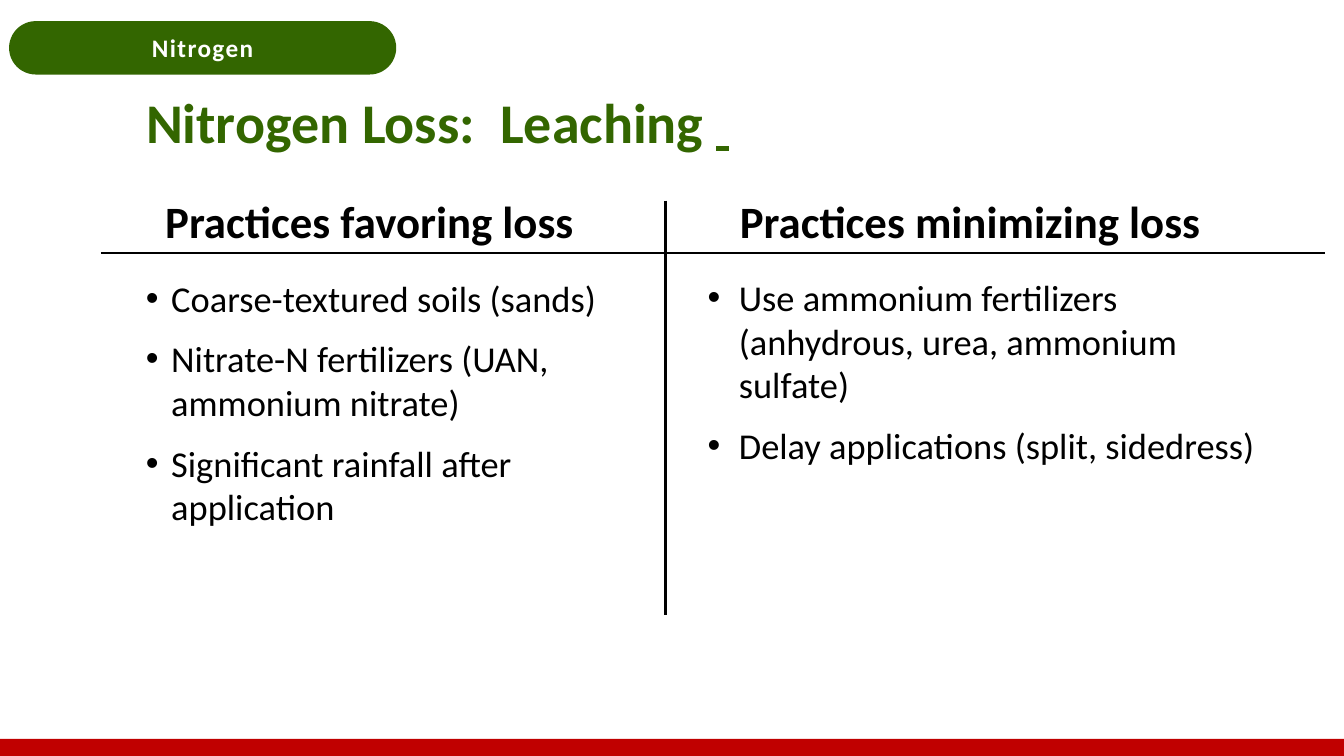
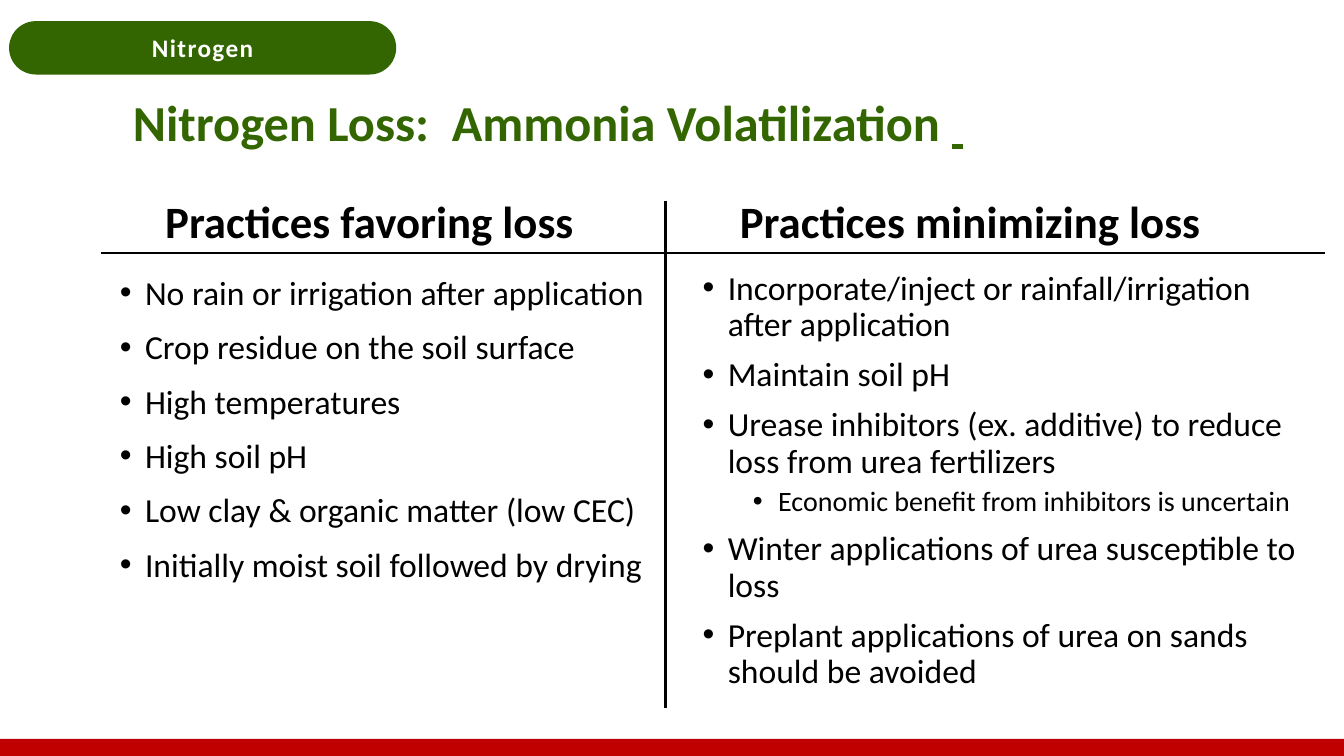
from dataclasses import dataclass

import pptx
import pptx.dml.color
import pptx.enum.shapes
import pptx.enum.text
import pptx.oxml.ns
import pptx.util
from lxml import etree
from pptx.util import Inches

GREEN, RED, BLACK, WHITE = "336600", "C00000", "000000", "FFFFFF"
FONT = "Calibri"
SLIDE_W, SLIDE_H = 13.33, 7.5
RULE_X, RULE_Y = 6.6, 2.51
HEADINGS = (("Practices favoring loss", 1.54), ("Practices minimizing loss", 7.24))


@dataclass
class Bullet:
    text: str
    size: float
    level: int = 0
    before: float = 0


@dataclass
class BulletList:
    box: tuple[float, float, float, float]
    bullets: list[Bullet]
    hang: float = 0.25
    after: float = 0
    line_spacing: float = 1.0


@dataclass
class LossSlide:
    title: str
    title_left: float
    title_size: float
    rule_bottom: float
    lists: tuple[BulletList, BulletList]


def rgb(hex_colour: str) -> pptx.dml.color.RGBColor:
    return pptx.dml.color.RGBColor.from_string(hex_colour)


def add_run(p, text: str, size: float, colour: str = BLACK, bold: bool = False):
    r = p.add_run()
    r.text = text
    r.font.name = FONT
    r.font.size = pptx.util.Pt(size)
    r.font.bold = bold
    r.font.color.rgb = rgb(colour)
    return r


def add_text_box(s, left: float, top: float, width: float, height: float):
    tf = s.shapes.add_textbox(
        Inches(left), Inches(top), Inches(width), Inches(height)).text_frame
    tf.word_wrap = True
    return tf


def add_filled_shape(s, kind, left: float, top: float, width: float, height: float, fill: str):
    sp = s.shapes.add_shape(
        kind, Inches(left), Inches(top), Inches(width), Inches(height))
    sp.shadow.inherit = False
    sp.fill.solid()
    sp.fill.fore_color.rgb = rgb(fill)
    sp.line.fill.background()
    return sp


def add_rule(s, x1: float, y1: float, x2: float, y2: float) -> None:
    line = s.shapes.add_connector(
        pptx.enum.shapes.MSO_CONNECTOR.STRAIGHT,
        Inches(x1), Inches(y1), Inches(x2), Inches(y2))
    line.line.color.rgb = rgb(BLACK)
    line.line.width = pptx.util.Pt(1.5)
    etree.SubElement(line._element.spPr, pptx.oxml.ns.qn("a:effectLst"))


def add_frame(s) -> None:
    """Draw the bottom band and the section pill."""
    shapes = pptx.enum.shapes.MSO_SHAPE
    add_filled_shape(s, shapes.RECTANGLE, 0, 7.33, SLIDE_W, SLIDE_H - 7.33, RED)
    pill = add_filled_shape(s, shapes.ROUNDED_RECTANGLE, 0.09, 0.21, 3.84, 0.53, GREEN)
    pill.adjustments[0] = 0.5
    tf = pill.text_frame
    tf.vertical_anchor = pptx.enum.text.MSO_ANCHOR.MIDDLE
    p = tf.paragraphs[0]
    p.alignment = pptx.enum.text.PP_ALIGN.CENTER
    r = add_run(p, "Nitrogen", 18, WHITE, bold=True)
    r._r.get_or_add_rPr().set("spc", "100")


def add_title(s, text: str, left: float, size: float) -> None:
    tf = add_text_box(s, left, 0.74, 10.89, 1)
    tf.vertical_anchor = pptx.enum.text.MSO_ANCHOR.MIDDLE
    p = tf.paragraphs[0]
    p.line_spacing = 0.9
    add_run(p, text + " ", size, GREEN, bold=True)
    add_run(p, " ", size, GREEN, bold=True).font.underline = True


def set_bullet(p, level: int, hang: float) -> None:
    p.level = level
    pPr = p._p.get_or_add_pPr()
    pPr.set("marL", str(Inches(hang + 0.5 * level)))
    pPr.set("indent", str(-Inches(hang)))
    etree.SubElement(pPr, pptx.oxml.ns.qn("a:buFont")).set("typeface", "Arial")
    etree.SubElement(pPr, pptx.oxml.ns.qn("a:buChar")).set("char", "•")


def add_bullets(s, items: BulletList) -> None:
    tf = add_text_box(s, *items.box)
    for i, bullet in enumerate(items.bullets):
        p = tf.add_paragraph() if i else tf.paragraphs[0]
        set_bullet(p, bullet.level, items.hang)
        p.line_spacing = items.line_spacing
        p.space_before = pptx.util.Pt(bullet.before if i else 0)
        p.space_after = pptx.util.Pt(items.after)
        add_run(p, bullet.text, bullet.size)


def add_loss_slide(prs, content: LossSlide) -> None:
    s = prs.slides.add_slide(prs.slide_layouts[6])
    add_frame(s)
    add_title(s, content.title, content.title_left, content.title_size)
    for text, left in HEADINGS:
        tf = add_text_box(s, left, 1.87, 5, 0.64)
        add_run(tf.paragraphs[0], text, 32, bold=True)
    for items in content.lists:
        add_bullets(s, items)
    add_rule(s, RULE_X, 1.99, RULE_X, content.rule_bottom)
    add_rule(s, 1, RULE_Y, 13.14, RULE_Y)


SLIDES = [
    LossSlide("Nitrogen Loss:  Leaching", 1.35, 40, 6.1, (
        BulletList((1.35, 2.69, 4.94, 3.55), [
            Bullet("Coarse-textured soils (sands)", 26),
            Bullet("Nitrate-N fertilizers (UAN, ammonium nitrate)", 26),
            Bullet("Significant rainfall after application", 26),
        ], after=12),
        BulletList((6.92, 2.68, 5.68, 2.02), [
            Bullet("Use ammonium fertilizers (anhydrous, urea, ammonium sulfate)", 26),
            Bullet("Delay applications (split, sidedress)", 26),
        ], hang=0.31, after=12),
    )),
    LossSlide("Nitrogen Loss:  Ammonia Volatilization", 1.22, 36, 7.02, (
        BulletList((1.09, 2.65, 5.65, 3.47), [
            Bullet(text, 24, before=10) for text in (
                "No rain or irrigation after application",
                "Crop residue on the soil surface",
                "High temperatures",
                "High soil pH",
                "Low clay & organic matter (low CEC)",
                "Initially moist soil followed by drying",
            )
        ]),
        BulletList((6.87, 2.64, 6.26, 4.45), [
            Bullet("Incorporate/inject or rainfall/irrigation after application", 24),
            Bullet("Maintain soil pH", 24, before=10),
            Bullet("Urease inhibitors (ex. additive) to reduce loss from urea fertilizers",
                   24, before=10),
            Bullet("Economic benefit from inhibitors is uncertain", 20, level=1, before=5),
            Bullet("Winter applications of urea susceptible to loss", 24, before=10),
            Bullet("Preplant applications of urea on sands should be avoided", 24, before=10),
        ], line_spacing=0.9),
    )),
]


def main() -> None:
    prs = pptx.Presentation()
    prs.slide_width = Inches(SLIDE_W)
    prs.slide_height = Inches(SLIDE_H)
    for content in SLIDES:
        add_loss_slide(prs, content)
    prs.save("out.pptx")


if __name__ == "__main__":
    main()
